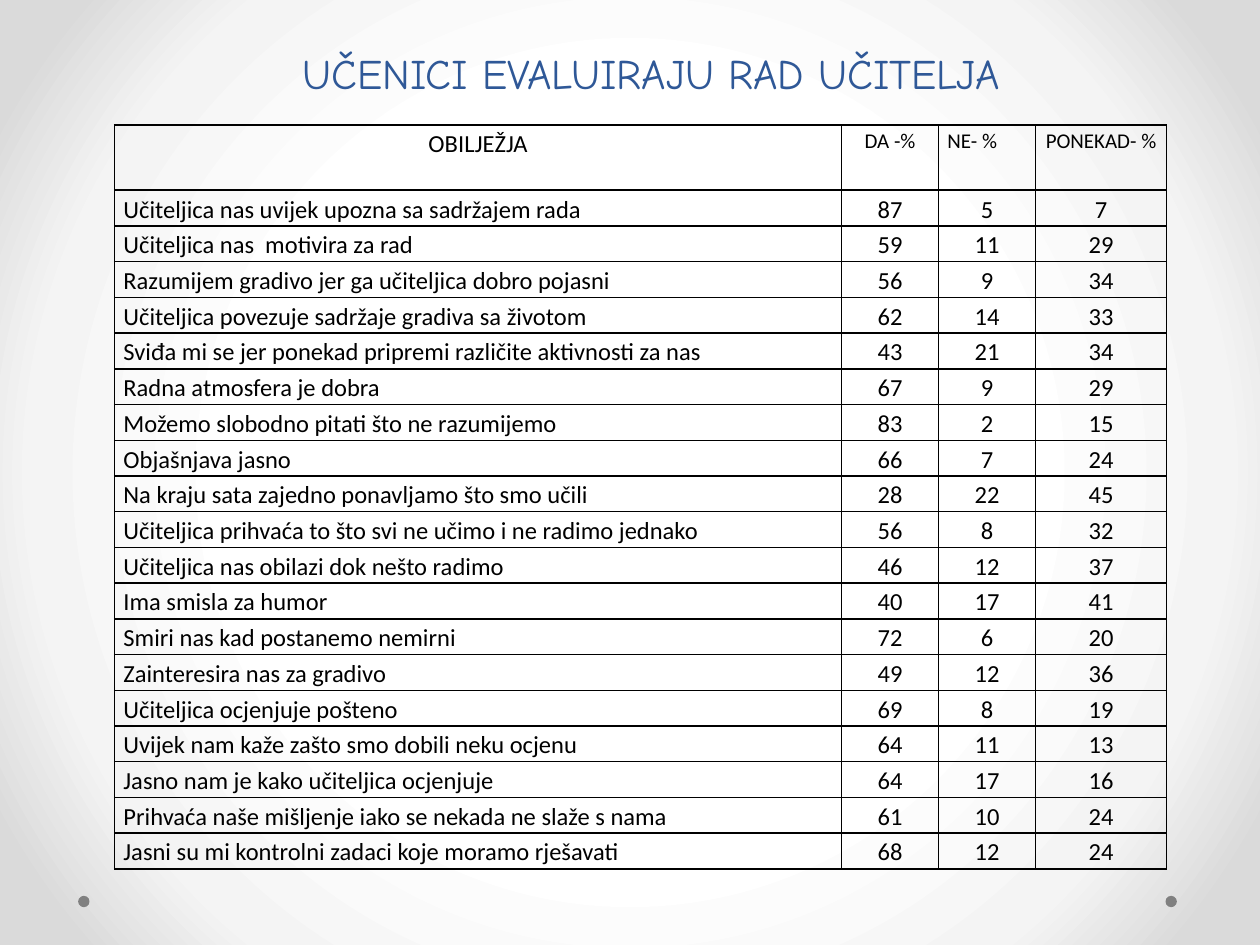
from dataclasses import dataclass

from pptx import Presentation
from pptx.dml.color import RGBColor
from pptx.enum.shapes import MSO_SHAPE
from pptx.enum.text import MSO_ANCHOR, PP_ALIGN
from pptx.oxml import parse_xml
from pptx.oxml.ns import nsdecls, qn
from pptx.util import Inches, Pt

COLORS = {
    "title": "2F5897",
    "text": "000000",
    "border": "000000",
    "dot": "808080",
}
BACKGROUND_STOPS = [(50, "FFFFFF"), (76, "F4F4F4"), (92, "DADADA")]
COLUMN_WIDTHS = [5.77, 0.77, 0.77, 1.04]
TABLE_HEIGHT, HEADER_HEIGHT = 5.91, 0.52


@dataclass
class Rating:
    statement: str
    yes: int
    no: int
    sometimes: int


@dataclass
class Header:
    text: str
    size: int
    align: PP_ALIGN


HEADERS = [
    Header("OBILJEŽJA", 14, PP_ALIGN.CENTER),
    Header("DA -%", 12, PP_ALIGN.CENTER),
    Header("NE- %", 12, PP_ALIGN.LEFT),
    Header("PONEKAD- %", 12, PP_ALIGN.CENTER),
]
RATINGS = [
    Rating("Učiteljica nas uvijek upozna sa sadržajem rada", 87, 5, 7),
    Rating("Učiteljica nas  motivira za rad", 59, 11, 29),
    Rating("Razumijem gradivo jer ga učiteljica dobro pojasni", 56, 9, 34),
    Rating("Učiteljica povezuje sadržaje gradiva sa životom", 62, 14, 33),
    Rating("Sviđa mi se jer ponekad pripremi različite aktivnosti za nas", 43, 21, 34),
    Rating("Radna atmosfera je dobra", 67, 9, 29),
    Rating("Možemo slobodno pitati što ne razumijemo", 83, 2, 15),
    Rating("Objašnjava jasno", 66, 7, 24),
    Rating("Na kraju sata zajedno ponavljamo što smo učili", 28, 22, 45),
    Rating("Učiteljica prihvaća to što svi ne učimo i ne radimo jednako", 56, 8, 32),
    Rating("Učiteljica nas obilazi dok nešto radimo", 46, 12, 37),
    Rating("Ima smisla za humor", 40, 17, 41),
    Rating("Smiri nas kad postanemo nemirni", 72, 6, 20),
    Rating("Zainteresira nas za gradivo", 49, 12, 36),
    Rating("Učiteljica ocjenjuje pošteno", 69, 8, 19),
    Rating("Uvijek nam kaže zašto smo dobili neku ocjenu", 64, 11, 13),
    Rating("Jasno nam je kako učiteljica ocjenjuje", 64, 17, 16),
    Rating("Prihvaća naše mišljenje iako se nekada ne slaže s nama", 61, 10, 24),
    Rating("Jasni su mi kontrolni zadaci koje moramo rješavati", 68, 12, 24),
]


def set_background(s) -> None:
    s.background.fill.solid()
    stops = "".join(
        f'<a:gs pos="{pos * 1000}"><a:srgbClr val="{color}"/></a:gs>'
        for pos, color in BACKGROUND_STOPS
    )
    bg = s.element.find(".//" + qn("p:bgPr"))
    bg.replace(bg[0], parse_xml(
        f'<a:gradFill {nsdecls("a")} rotWithShape="1"><a:gsLst>{stops}</a:gsLst>'
        '<a:path path="circle"><a:fillToRect l="50000" t="50000" r="50000" b="50000"/>'
        "</a:path></a:gradFill>"
    ))


def add_dot(s, left: float) -> None:
    sp = s.shapes.add_shape(
        MSO_SHAPE.OVAL, Inches(left), Inches(7.11), Inches(0.09), Inches(0.09)
    )
    sp.shadow.inherit = False
    sp.fill.solid()
    sp.fill.fore_color.rgb = RGBColor.from_string(COLORS["dot"])
    sp.line.fill.background()


def format_paragraph(p, font: str, size: int, color: str, align: PP_ALIGN) -> None:
    p.alignment = align
    for r in p.runs:
        r.font.name = font
        r.font.size = Pt(size)
        r.font.color.rgb = RGBColor.from_string(COLORS[color])


def add_title(s, text: str) -> None:
    sp = s.shapes.add_textbox(Inches(0.67), Inches(-0.42), Inches(9), Inches(1.25))
    tf = sp.text_frame
    tf.word_wrap = True
    tf.vertical_anchor = MSO_ANCHOR.BOTTOM
    tf.text = text
    p = tf.paragraphs[0]
    p.line_spacing = Pt(58)
    format_paragraph(p, "Comic Neue", 24, "title", PP_ALIGN.CENTER)


def set_borders(cell) -> None:
    props = cell._tc.get_or_add_tcPr()
    for i, side in enumerate(("lnL", "lnR", "lnT", "lnB")):
        props.insert(i, parse_xml(
            f'<a:{side} {nsdecls("a")} w="{Pt(1)}"><a:solidFill>'
            f'<a:srgbClr val="{COLORS["border"]}"/></a:solidFill></a:{side}>'
        ))


def fill_cell(cell, text: str, size: int, align: PP_ALIGN) -> None:
    cell.margin_left = cell.margin_right = Inches(0.07)
    cell.margin_top = cell.margin_bottom = 0
    cell.fill.background()
    set_borders(cell)
    cell.text_frame.text = text
    p = cell.text_frame.paragraphs[0]
    p.line_spacing = 1.15
    format_paragraph(p, "Calibri", size, "text", align)


def add_ratings_table(s) -> None:
    table = s.shapes.add_table(
        len(RATINGS) + 1, len(HEADERS), Inches(0.91), Inches(0.99),
        Inches(sum(COLUMN_WIDTHS)), Inches(TABLE_HEIGHT),
    ).table
    table.first_row = table.horz_banding = False
    for column, width in zip(table.columns, COLUMN_WIDTHS):
        column.width = Inches(width)
    for row in table.rows:
        row.height = Inches((TABLE_HEIGHT - HEADER_HEIGHT) / len(RATINGS))
    table.rows[0].height = Inches(HEADER_HEIGHT)
    for j, header in enumerate(HEADERS):
        fill_cell(table.cell(0, j), header.text, header.size, header.align)
    for i, rating in enumerate(RATINGS, start=1):
        fill_cell(table.cell(i, 0), rating.statement, 14, PP_ALIGN.LEFT)
        for j, value in enumerate((rating.yes, rating.no, rating.sometimes), start=1):
            fill_cell(table.cell(i, j), str(value), 14, PP_ALIGN.CENTER)


def main() -> None:
    """Build the slide on which pupils rate their teacher's work."""
    prs = Presentation()
    prs.slide_width, prs.slide_height = Inches(10), Inches(7.5)
    s = prs.slides.add_slide(prs.slide_layouts[6])
    set_background(s)
    for left in (9.25, 0.62):
        add_dot(s, left)
    add_title(s, "UČENICI EVALUIRAJU RAD UČITELJA")
    add_ratings_table(s)
    prs.save("out.pptx")


if __name__ == "__main__":
    main()
